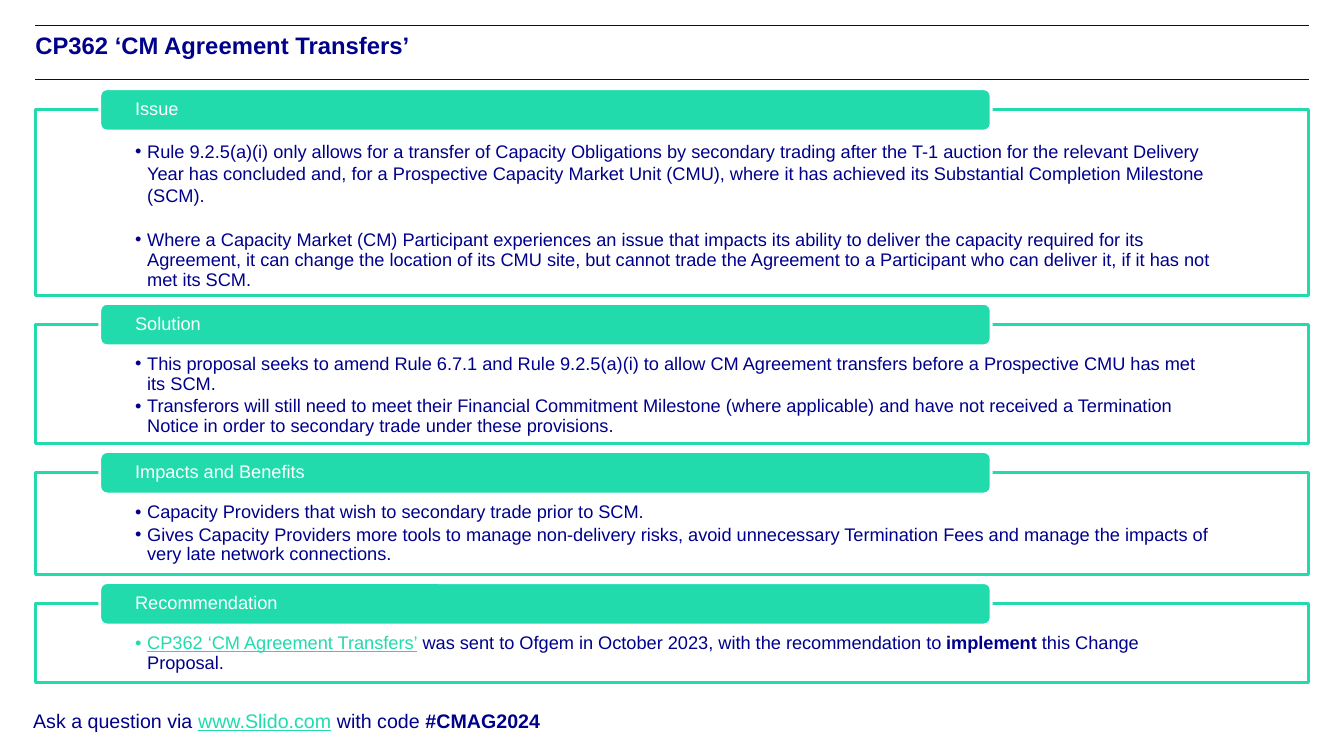
from dataclasses import dataclass
from lxml import etree
from pptx import Presentation
from pptx.dml.color import RGBColor
from pptx.enum import shapes, text
from pptx.oxml.ns import qn
from pptx.util import Inches, Pt


@dataclass(frozen=True)
class Theme:
    font: str = "Arial"
    navy: RGBColor = RGBColor.from_string("00008B")
    teal: RGBColor = RGBColor.from_string("21DBAD")
    white: RGBColor = RGBColor.from_string("FFFFFF")
    title_size: int = 17
    body_size: int = 13
    footer_size: int = 14


THEME = Theme()
TITLE = "CP362 ‘CM Agreement Transfers’"
FOOTER = [
    ("Ask a question via ", "plain"),
    ("www.Slido.com", "link"),
    (" with code ", "plain"),
    ("#CMAG2024", "bold"),
]
SECTIONS = [
    {"label": "Issue", "height": 1.84, "gap": 18, "spacings": [1.0, 0.9], "bullets": [
        [("Rule 9.2.5(a)(i) only allows for a transfer of Capacity Obligations by secondary trading "
          "after the T-1 auction for the relevant Delivery Year has concluded and, for a Prospective "
          "Capacity Market Unit (CMU), where it has achieved its Substantial Completion Milestone "
          "(SCM).", "plain")],
        [("Where a Capacity Market (CM) Participant experiences an issue that impacts its ability to "
          "deliver the capacity required for its Agreement, it can change the location of its CMU "
          "site, but cannot trade the Agreement to a Participant who can deliver it, if it has not "
          "met its SCM.", "plain")],
    ]},
    {"label": "Solution", "height": 1.18, "gap": 2, "spacings": [0.9, 0.9], "bullets": [
        [("This proposal seeks to amend Rule 6.7.1 and Rule 9.2.5(a)(i) to allow CM Agreement "
          "transfers before a Prospective CMU has met its SCM.", "plain")],
        [("Transferors will still need to meet their Financial Commitment Milestone (where "
          "applicable) and have not received a Termination Notice in order to secondary trade under "
          "these provisions.", "plain")],
    ]},
    {"label": "Impacts and Benefits", "height": 1.01, "gap": 2, "spacings": [0.9, 0.9], "bullets": [
        [("Capacity Providers that wish to secondary trade prior to SCM.", "plain")],
        [("Gives Capacity Providers more tools to manage non-delivery risks, avoid unnecessary "
          "Termination Fees and manage the impacts of very late network connections.", "plain")],
    ]},
    {"label": "Recommendation", "height": 0.78, "gap": 2, "spacings": [0.9], "bullets": [
        [("CP362 ‘CM Agreement Transfers’", "link"),
         (" was sent to Ofgem in October 2023, with the recommendation to ", "plain"),
         ("implement", "bold"),
         (" this Change Proposal.", "plain")],
    ]},
]

LEFT, WIDTH = 0.35, 12.63
RULE_TOPS = (0.25, 0.79)
FIRST_PANEL_TOP, PANEL_GAP = 1.09, 0.29
BANNER_LEFT, BANNER_WIDTH, BANNER_HEIGHT = 0.99, 8.84, 0.42


def set_frame(frame, anchor, left=0, top=0, right=0, bottom=0):
    frame.word_wrap = True
    frame.vertical_anchor = anchor
    frame.margin_left, frame.margin_top = Inches(left), Inches(top)
    frame.margin_right, frame.margin_bottom = Inches(right), Inches(bottom)


def set_font(paragraph, size, color, bold=False):
    paragraph.alignment = text.PP_ALIGN.LEFT
    paragraph.font.name = THEME.font
    paragraph.font.size = Pt(size)
    paragraph.font.bold = bold
    paragraph.font.color.rgb = color


def add_runs(paragraph, runs, size):
    set_font(paragraph, size, THEME.navy)
    for words, style in runs:
        run = paragraph.add_run()
        run.text = words
        run.font.name = THEME.font
        run.font.size = Pt(size)
        run.font.bold = style == "bold"
        run.font.underline = style == "link"
        run.font.color.rgb = THEME.teal if style == "link" else THEME.navy


def add_bullet(paragraph):
    properties = paragraph._p.get_or_add_pPr()
    properties.set("marL", str(Inches(0.12)))
    properties.set("indent", str(Inches(-0.12)))
    etree.SubElement(properties, qn("a:buFont")).set("typeface", THEME.font)
    etree.SubElement(properties, qn("a:buChar")).set("char", "•")


def add_box(slide, kind, left, top, width, height, fill, line):
    shape = slide.shapes.add_shape(kind, Inches(left), Inches(top), Inches(width), Inches(height))
    shape.shadow.inherit = False
    shape.fill.solid()
    shape.fill.fore_color.rgb = fill
    shape.line.color.rgb = line
    shape.line.width = Pt(2)
    return shape


def add_rule(slide, top):
    rule = slide.shapes.add_connector(
        shapes.MSO_CONNECTOR.STRAIGHT, Inches(LEFT), Inches(top), Inches(LEFT + WIDTH), Inches(top))
    rule.line.color.rgb = THEME.navy
    rule.line.width = Pt(0.5)
    etree.SubElement(rule._element.spPr, qn("a:effectLst"))


def add_title(slide):
    title = slide.shapes.title
    title.left, title.top = Inches(LEFT), Inches(0.3)
    title.width, title.height = Inches(WIDTH), Inches(0.49)
    set_frame(title.text_frame, text.MSO_ANCHOR.TOP)
    title.text_frame.text = TITLE
    set_font(title.text_frame.paragraphs[0], THEME.title_size, THEME.navy, bold=True)


def add_section(slide, section, top):
    panel = add_box(slide, shapes.MSO_SHAPE.RECTANGLE, LEFT, top, WIDTH,
                    section["height"], THEME.white, THEME.teal)
    frame = panel.text_frame
    set_frame(frame, text.MSO_ANCHOR.TOP, 0.99, 0.3, 0.97, 0)
    for index, (runs, spacing) in enumerate(zip(section["bullets"], section["spacings"])):
        paragraph = frame.add_paragraph() if index else frame.paragraphs[0]
        add_bullet(paragraph)
        paragraph.line_spacing = spacing
        if index < len(section["bullets"]) - 1:
            paragraph.space_after = Pt(section["gap"])
        add_runs(paragraph, runs, THEME.body_size)

    banner = add_box(slide, shapes.MSO_SHAPE.ROUNDED_RECTANGLE, BANNER_LEFT,
                     top - BANNER_HEIGHT / 2, BANNER_WIDTH, BANNER_HEIGHT, THEME.teal, THEME.white)
    set_frame(banner.text_frame, text.MSO_ANCHOR.MIDDLE, 0.33, 0, 0.33, 0)
    banner.text_frame.text = section["label"]
    label = banner.text_frame.paragraphs[0]
    label.line_spacing = 0.9
    set_font(label, THEME.body_size, THEME.white)


def add_footer(slide):
    footer = slide.shapes.add_textbox(Inches(0.23), Inches(6.98), Inches(5.61), Inches(0.34))
    set_frame(footer.text_frame, text.MSO_ANCHOR.TOP, 0.1, 0.05, 0.1, 0.05)
    add_runs(footer.text_frame.paragraphs[0], FOOTER, THEME.footer_size)


def main():
    presentation = Presentation()
    presentation.slide_width, presentation.slide_height = Inches(13.33), Inches(7.5)
    slide = presentation.slides.add_slide(presentation.slide_layouts[5])
    for rule_top in RULE_TOPS:
        add_rule(slide, rule_top)
    add_title(slide)
    top = FIRST_PANEL_TOP
    for section in SECTIONS:
        add_section(slide, section, top)
        top += section["height"] + PANEL_GAP
    add_footer(slide)
    presentation.save("out.pptx")


if __name__ == "__main__":
    main()
